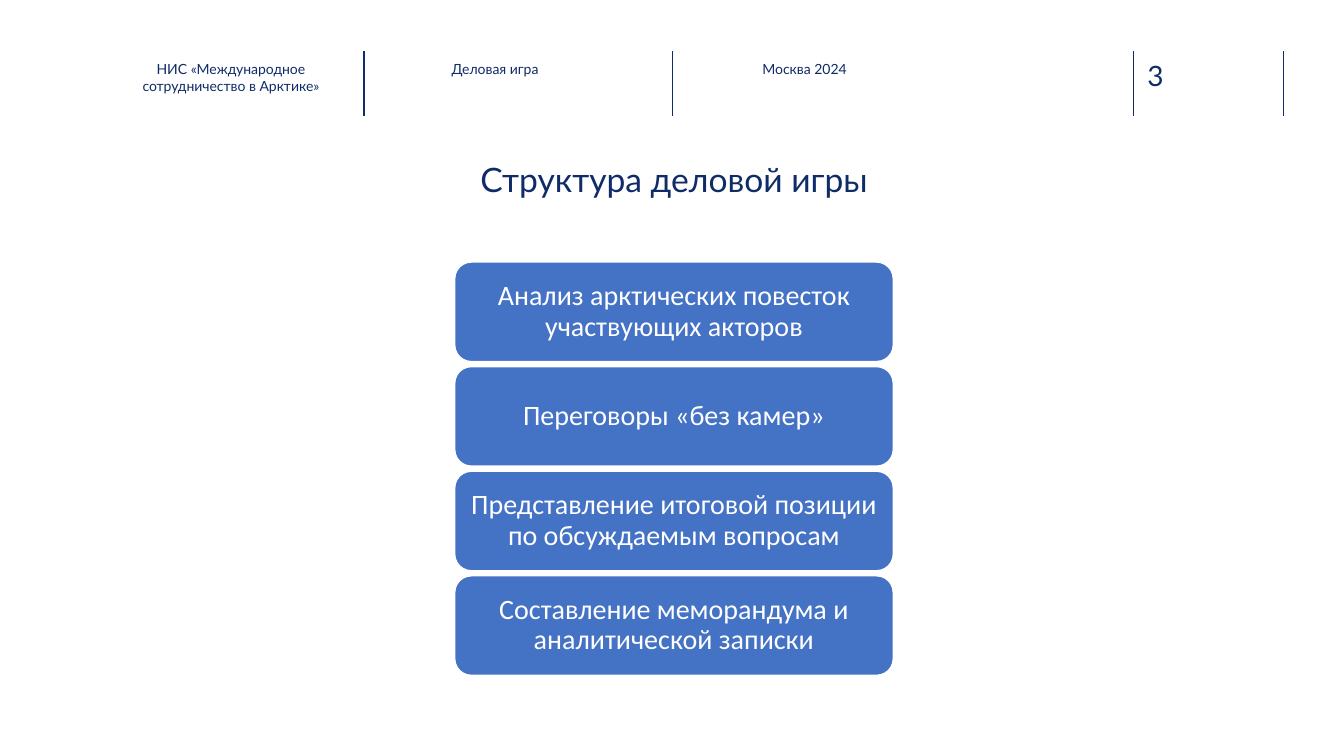
from pptx import Presentation
from pptx.dml.color import RGBColor
from pptx.enum.shapes import MSO_CONNECTOR as Connector, MSO_SHAPE as Shape
from pptx.enum.text import MSO_ANCHOR as Anchor, PP_ALIGN as Align
from pptx.oxml.ns import qn
from pptx.util import Inches, Pt
from lxml.etree import SubElement

WIDTH, HEIGHT = 13.33, 7.5
NAVY, BLUE, WHITE = "0F2C68", "4472C4", "FFFFFF"
RULE_COLOUR = "102D69"
DIVIDERS = (3.61, 6.67, 11.24, 12.73)
LABELS = (
    ("НИС «Международное сотрудничество в Арктике»", 1.25, 2.08),
    ("Деловая игра", 3.78, 2.26),
    ("Москва 2024", 6.85, 2.26),
)
STAGES = (
    "Анализ арктических повесток участвующих акторов",
    "Переговоры «без камер»",
    "Представление итоговой позиции по обсуждаемым вопросам",
    "Составление меморандума и аналитической записки",
)


def colour(value):
    """Turn a hex string into a colour."""
    return RGBColor.from_string(value)


def write(shape, text, size, font="Lato", ink=NAVY, align=Align.CENTER,
          anchor=Anchor.TOP, inset=(0, 0), spacing=None):
    """Fill a shape with one formatted paragraph."""
    frame = shape.text_frame
    frame.word_wrap = True
    frame.vertical_anchor = anchor
    frame.margin_left = frame.margin_right = Inches(inset[0])
    frame.margin_top = frame.margin_bottom = Inches(inset[1])
    para = frame.paragraphs[0]
    para.alignment = align
    if spacing:
        para.line_spacing = spacing
    span = para.add_run()
    span.text = text
    span.font.name = font
    span.font.size = Pt(size)
    span.font.color.rgb = colour(ink)


def add_label(page, box, text, size, **style):
    """Place a text box with formatted text."""
    write(page.shapes.add_textbox(*map(Inches, box)), text, size, **style)


def add_divider(page, x, top, height):
    """Draw a vertical rule."""
    ends = map(Inches, (x, top, x, top + height))
    rule = page.shapes.add_connector(Connector.STRAIGHT, *ends)
    rule.line.color.rgb = colour(RULE_COLOUR)
    rule.line.width = Pt(1)
    SubElement(rule.element.spPr, qn("a:effectLst"))


def add_header(page, box):
    """Place the dividers, running labels and page number in a band."""
    left, top, _, height = box
    for x in DIVIDERS:
        add_divider(page, left + x, top, height)
    for text, x, width in LABELS:
        add_label(page, (left + x, top + 0.09, width, 0.45), text, 10)
    add_label(page, (left + 11.38, top + 0.07, 0.73, 0.34), "3", 20, align=Align.LEFT)


def add_stages(page, box, gap=0.05):
    """Stack the stages of the game as equal rounded blocks."""
    left, top, width, height = box
    block_height = (height - gap * (len(STAGES) - 1)) / len(STAGES)
    for row, text in enumerate(STAGES):
        place = (left, top + row * (block_height + gap), width, block_height)
        block = page.shapes.add_shape(Shape.ROUNDED_RECTANGLE, *map(Inches, place))
        block.shadow.inherit = False
        block.fill.solid()
        block.fill.fore_color.rgb = colour(BLUE)
        block.line.color.rgb = colour(WHITE)
        block.line.width = Pt(1)
        write(block, text, 20, font="Calibri", ink=WHITE, anchor=Anchor.MIDDLE,
              inset=(0.08, 0.04), spacing=0.9)


def build_structure_slide(deck):
    """Build the slide that shows the structure of the game."""
    page = deck.slides.add_slide(deck.slide_layouts[6])
    page.background.fill.solid()
    page.background.fill.fore_color.rgb = colour(WHITE)
    add_header(page, (0, 0.51, WIDTH, 0.64))
    add_label(page, (0.64, 1.58, 12.09, 0.85), "Структура деловой игры", 24)
    add_stages(page, (4.51, 2.6, 4.35, 4.1))


def main():
    """Create and save the deck."""
    deck = Presentation()
    deck.slide_width, deck.slide_height = Inches(WIDTH), Inches(HEIGHT)
    build_structure_slide(deck)
    deck.save("out.pptx")


if __name__ == "__main__":
    main()
